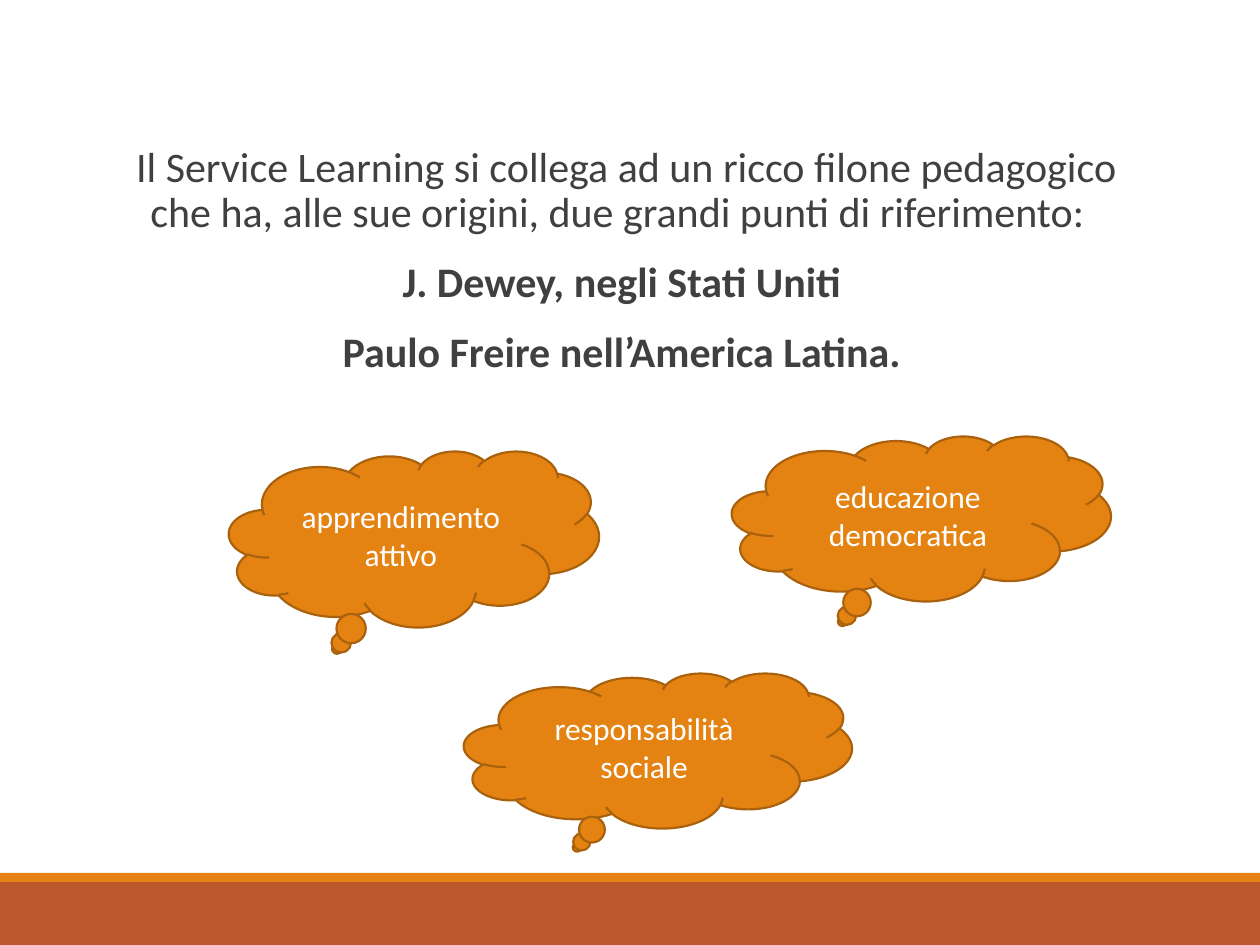
from lxml import etree
from pptx import Presentation
from pptx import util as u
from pptx.dml.color import RGBColor
from pptx.enum import shapes, text
from pptx.oxml.ns import qn

PX = u.Inches(1) // 126
ORANGE, RUST, BROWN = "E48312", "BD582C", "A9610D"
GREY, WHITE = "404040", "FFFFFF"

STATEMENTS = [
    ("Il Service Learning si collega ad un ricco filone pedagogico "
     "che ha, alle sue origini, due grandi punti di riferimento: ", False),
    ("J. Dewey, negli Stati Uniti ", True),
    ("Paulo Freire nell’America Latina. ", True),
]
CLOUDS = [
    ("educazione democratica", (732, 436, 379, 165)),
    ("apprendimento attivo", (229, 451, 370, 176)),
    ("responsabilità sociale", (464, 673, 388, 155)),
]
BARS = [(RUST, (0, 882, 1260, 63)), (ORANGE, (0, 873, 1260, 9))]


def color(value):
    return RGBColor.from_string(value)


def scaled(frame):
    return [length * PX for length in frame]


def style(para, size, ink, bold=False):
    para.alignment = text.PP_ALIGN.CENTER
    for span in para.runs:
        span.font.name = "Calibri"
        span.font.size = u.Pt(size)
        span.font.bold = bold
        span.font.color.rgb = color(ink)


def add_filled(page, kind, frame, fill):
    shape = page.shapes.add_shape(kind, *scaled(frame))
    shape.shadow.inherit = False
    shape.fill.solid()
    shape.fill.fore_color.rgb = color(fill)
    return shape


def add_bar(page, fill, frame):
    add_filled(page, shapes.MSO_SHAPE.RECTANGLE, frame, fill).line.fill.background()


def add_cloud(page, label, frame):
    cloud = add_filled(page, shapes.MSO_SHAPE.CLOUD_CALLOUT, frame, ORANGE)
    cloud.line.color.rgb = color(BROWN)
    cloud.line.width = u.Pt(1.25)
    cloud.text_frame.word_wrap = True
    cloud.text_frame.vertical_anchor = text.MSO_ANCHOR.MIDDLE
    cloud.text_frame.text = label
    style(cloud.text_frame.paragraphs[0], 18, WHITE)


def add_blank_bullet(para):
    """Give the paragraph a hanging indent with a space as its bullet."""
    props = para._p.get_or_add_pPr()
    props.set("marL", str(u.Inches(0.1)))
    props.set("indent", str(-u.Inches(0.1)))
    bullet_color = etree.SubElement(props, qn("a:buClr"))
    etree.SubElement(bullet_color, qn("a:srgbClr"), val=ORANGE)
    etree.SubElement(props, qn("a:buChar"), char=" ")


def add_statements(page, statements, frame):
    box = page.shapes.add_textbox(*scaled(frame)).text_frame
    box.word_wrap = True
    box.margin_left = box.margin_right = 0
    for index, (words, bold) in enumerate(statements):
        para = box.add_paragraph() if index else box.paragraphs[0]
        para.text = words
        add_blank_bullet(para)
        para.line_spacing = 0.9
        para.space_before = u.Pt(12 if index else 0)
        para.space_after = u.Pt(2)
        style(para, 24, GREY, bold)


def main():
    deck = Presentation()
    deck.slide_width, deck.slide_height = scaled((1260, 945))
    page = deck.slides.add_slide(deck.slide_layouts[6])
    for fill, frame in BARS:
        add_bar(page, fill, frame)
    add_statements(page, STATEMENTS, (96, 140, 1040, 706))
    for label, frame in CLOUDS:
        add_cloud(page, label, frame)
    deck.save("out.pptx")


if __name__ == "__main__":
    main()
